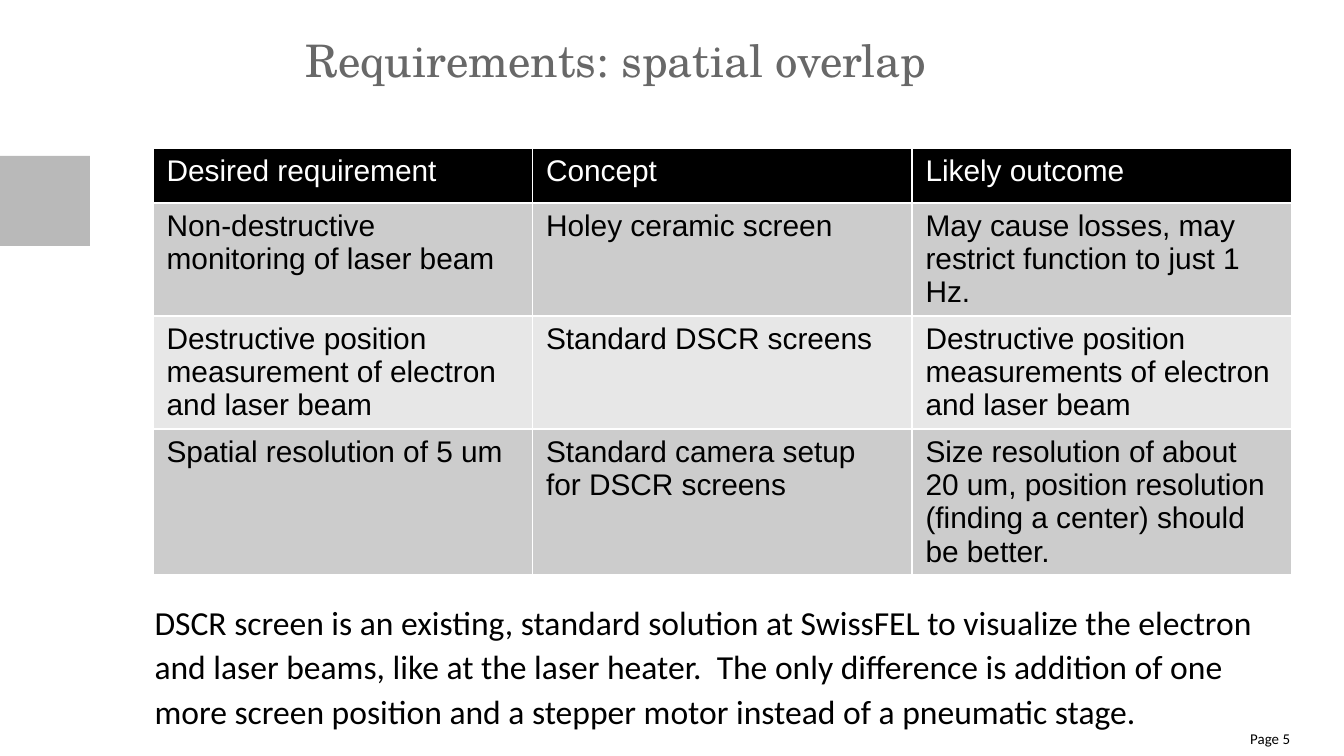
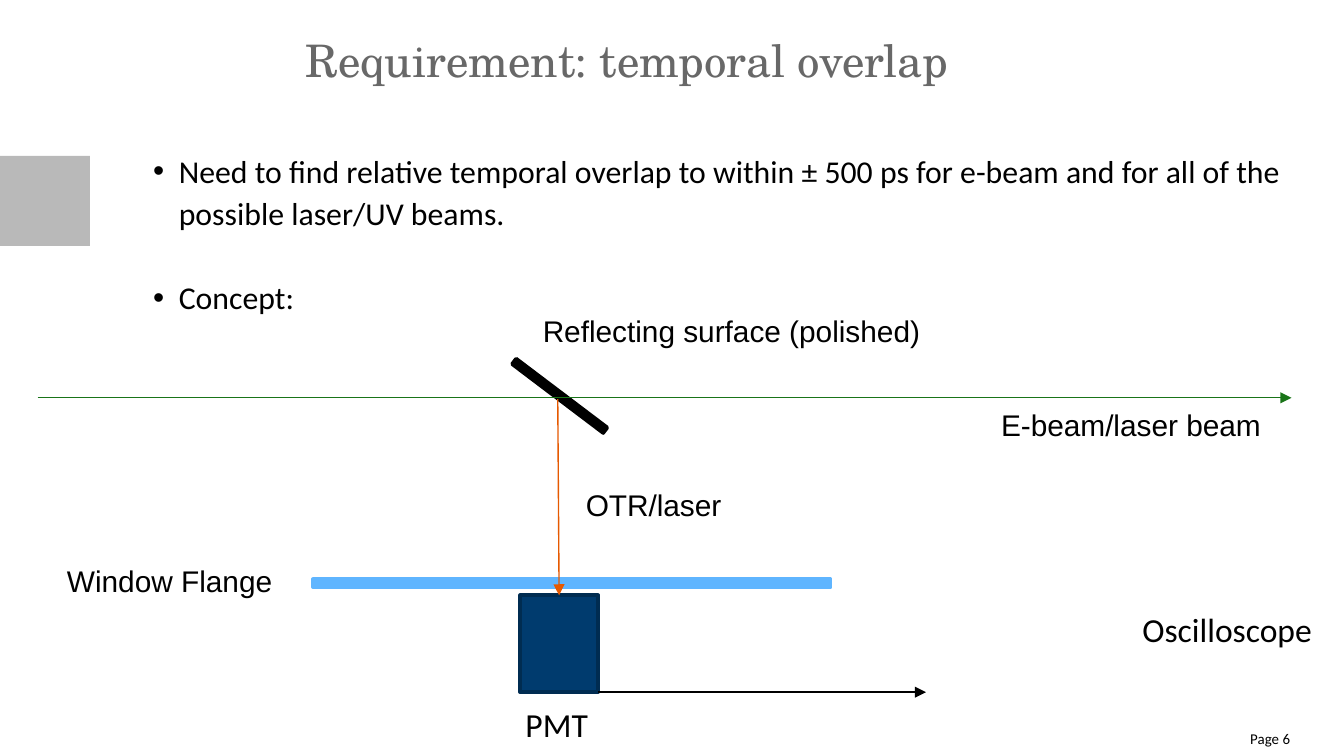
from lxml.etree import SubElement
from pptx import Presentation
from pptx.dml.color import RGBColor
from pptx.enum.shapes import MSO_CONNECTOR, MSO_SHAPE
from pptx.enum.text import MSO_ANCHOR, MSO_AUTO_SIZE, PP_ALIGN
from pptx.oxml.ns import qn
from pptx.util import Inches, Pt

BLACK, WHITE, GREY, BAND = "000000", "FFFFFF", "686868", "B9B9B9"
GREEN, ORANGE = "197418", "E65900"
SKY, NAVY, DARK_NAVY = "5FB5FF", "003B6E", "002C51"
HEADER_FILL, ROW_FILLS = BLACK, ("CCCCCC", "E7E7E7")
TITLE_FONT, BODY_FONT, LABEL_FONT = "TeX Gyre Schola", "Calibri", "Arial"


def color(hex_string):
    return RGBColor.from_string(hex_string)


def write(frame, text, size=16, font=LABEL_FONT, fill=BLACK, margins=None,
          align=PP_ALIGN.LEFT, spacing=1.0):
    """Fill a text frame with one formatted paragraph per line of text."""
    frame.text = text
    frame.word_wrap = True
    frame.auto_size = MSO_AUTO_SIZE.NONE
    frame.vertical_anchor = MSO_ANCHOR.TOP
    if margins is not None:
        frame.margin_left = frame.margin_right = Inches(margins)
        frame.margin_top = frame.margin_bottom = Inches(margins)
    for paragraph in frame.paragraphs:
        paragraph.alignment = align
        paragraph.line_spacing = spacing
        paragraph.space_before = Pt(0)
        for run in paragraph.runs:
            run.font.size = Pt(size)
            run.font.name = font
            run.font.bold = False
            run.font.color.rgb = color(fill)


presentation = Presentation()
presentation.slide_width = Inches(10)
presentation.slide_height = presentation.slide_width * 9 // 16

# Shared frame: side band, title and page number
slides = []
for page, layout, title in (
    (5, "Title Only", "Requirements: spatial overlap"),
    (6, "Title and Content", "Requirement: temporal overlap"),
):
    slide = presentation.slides.add_slide(
        presentation.slide_layouts.get_by_name(layout))
    slides.append(slide)

    band = slide.shapes.add_shape(MSO_SHAPE.RECTANGLE, 0, Inches(1.16),
                                  Inches(0.67), Inches(0.67))
    band.shadow.inherit = False
    band.fill.solid()
    band.fill.fore_color.rgb = color(BAND)
    band.line.fill.background()

    heading = slide.shapes.title
    heading.left, heading.top = Inches(2.27), Inches(0.24)
    heading.width, heading.height = Inches(7.34), Inches(0.42)
    write(heading.text_frame, title, size=24, font=TITLE_FONT, fill=GREY,
          margins=0)

    page_box = slide.shapes.add_textbox(Inches(8.97), Inches(5.43),
                                        Inches(0.63), Inches(0.16))
    write(page_box.text_frame, f"Page {page}", size=8, font=BODY_FONT,
          margins=0, align=PP_ALIGN.RIGHT)

spatial_slide, temporal_slide = slides

# Spatial overlap: requirements table
requirements = (
    ("Desired requirement", "Concept", "Likely outcome"),
    ("Non-destructive monitoring of laser beam", "Holey ceramic screen",
     "May cause losses, may restrict function to just 1 Hz."),
    ("Destructive position measurement of electron and laser beam",
     "Standard DSCR screens",
     "Destructive position measurements of electron and laser beam"),
    ("Spatial resolution of 5 um", "Standard camera setup for DSCR screens",
     "Size resolution of about 20 um, position resolution (finding a center) "
     "should be better."),
)
row_heights = (0.41, 0.84, 0.84, 1.08)
table = spatial_slide.shapes.add_table(
    len(requirements), 3, Inches(1.14), Inches(1.1),
    Inches(8.47), Inches(sum(row_heights))).table
for row_index, (texts, height) in enumerate(zip(requirements, row_heights)):
    table.rows[row_index].height = Inches(height)
    is_header = row_index == 0
    for column_index, text in enumerate(texts):
        cell = table.cell(row_index, column_index)
        cell.fill.solid()
        cell.fill.fore_color.rgb = color(
            HEADER_FILL if is_header else ROW_FILLS[(row_index - 1) % 2])
        write(cell.text_frame, text, fill=WHITE if is_header else BLACK)

summary = spatial_slide.shapes.add_textbox(Inches(1.15), Inches(4.45),
                                           Inches(8.46), Inches(1))
write(summary.text_frame,
      "DSCR screen is an existing, standard solution at SwissFEL to visualize "
      "the electron and laser beams, like at the laser heater.  The only "
      "difference is addition of one more screen position and a stepper motor "
      "instead of a pneumatic stage.",
      size=18, font=BODY_FONT, margins=0, spacing=1.1)

# Temporal overlap: bullet list
body = temporal_slide.placeholders[1]
body.left, body.top = Inches(1.14), Inches(1.1)
body.width, body.height = Inches(8.47), Inches(3.84)
write(body.text_frame,
      "Need to find relative temporal overlap to within ± 500 ps for e-beam "
      "and for all of the possible laser/UV beams.\nConcept:",
      size=17, font=BODY_FONT, margins=0, spacing=1.1)
for paragraph in body.text_frame.paragraphs:
    properties = paragraph._p.get_or_add_pPr()
    properties.set("marL", str(Inches(0.19)))
    properties.set("indent", str(-Inches(0.19)))
    SubElement(properties, qn("a:buFont")).set("typeface", LABEL_FONT)
    SubElement(properties, qn("a:buChar")).set("char", "•")
body.text_frame.paragraphs[1].space_before = Pt(22.8)

# Temporal overlap: mirror, window flange and detector
for left, top, width, height, rotation, fill, outline in (
    (4.14, 2.52, 0.05, 0.85, 307.1, BLACK, BLACK),
    (2.33, 4.31, 3.85, 0.06, 0, SKY, SKY),
    (3.87, 4.43, 0.58, 0.72, 0, NAVY, DARK_NAVY),
):
    part = temporal_slide.shapes.add_shape(
        MSO_SHAPE.RECTANGLE, Inches(left), Inches(top),
        Inches(width), Inches(height))
    part.rotation = rotation
    part.shadow.inherit = False
    part.fill.solid()
    part.fill.fore_color.rgb = color(fill)
    part.line.color.rgb = color(outline)
    part.line.width = Pt(2)

# Temporal overlap: beam, reflected light and signal arrows
for start_x, start_y, end_x, end_y, stroke in (
    (0.28, 2.96, 9.61, 2.96, GREEN),
    (4.15, 2.97, 4.16, 4.43, ORANGE),
    (4.45, 5.15, 6.89, 5.15, BLACK),
):
    arrow = temporal_slide.shapes.add_connector(
        MSO_CONNECTOR.STRAIGHT, Inches(start_x), Inches(start_y),
        Inches(end_x), Inches(end_y))
    arrow.line.color.rgb = color(stroke)
    arrow.line.width = Pt(0.75)
    SubElement(arrow.line._get_or_add_ln(), qn("a:tailEnd")).set("type", "triangle")
    SubElement(arrow._element.spPr, qn("a:effectLst"))

# Temporal overlap: labels
optics_format = {}
device_format = {"size": 18, "font": BODY_FONT, "margins": 0, "spacing": 1.1}
for text, left, top, width, height, text_format in (
    ("Reflecting surface (polished)", 3.94, 2.28, 3.11, 0.37, optics_format),
    ("E-beam/laser beam", 7.35, 2.98, 2.3, 0.37, optics_format),
    ("Window Flange", 0.4, 4.14, 1.79, 0.37, optics_format),
    ("OTR/laser", 4.26, 3.57, 1.22, 0.37, optics_format),
    ("PMT", 3.91, 5.21, 0.55, 0.39, device_format),
    ("Oscilloscope", 8.5, 4.5, 1.28, 0.43, device_format),
):
    label = temporal_slide.shapes.add_textbox(
        Inches(left), Inches(top), Inches(width), Inches(height))
    write(label.text_frame, text, **text_format)

presentation.save("out.pptx")
